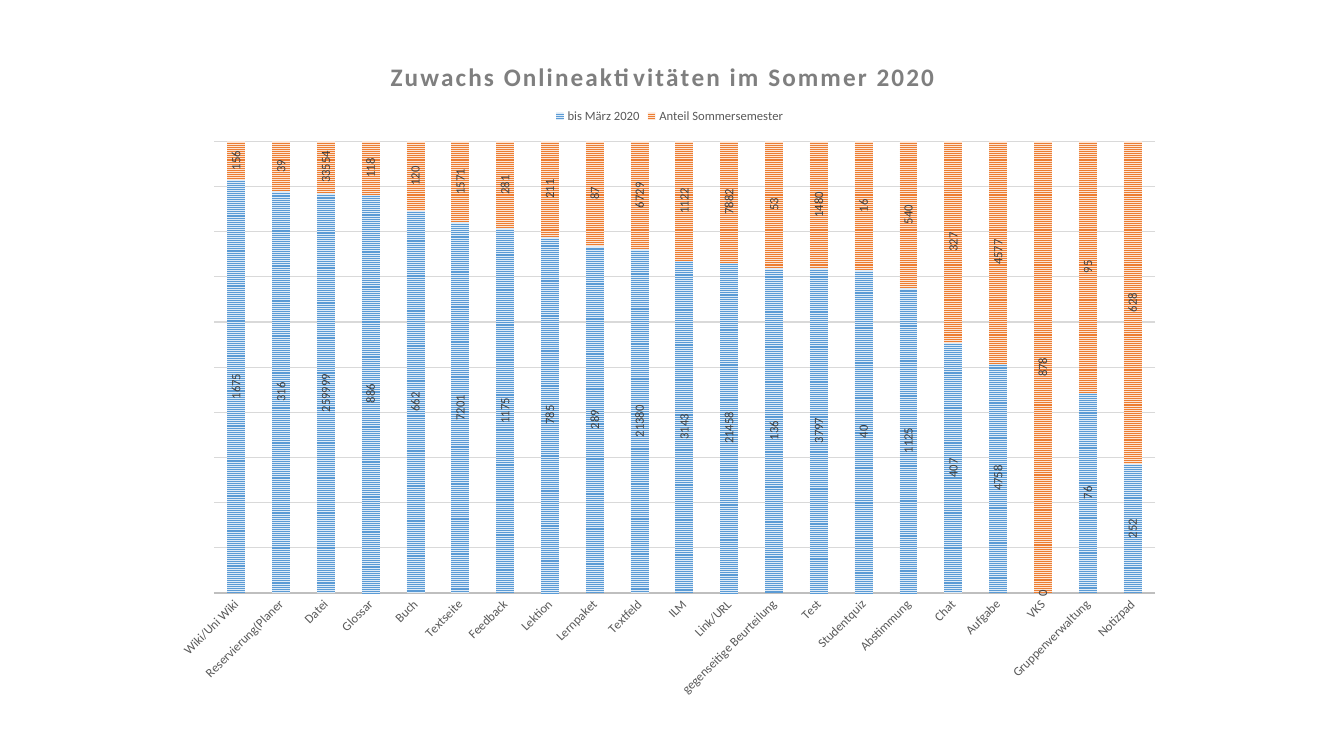
from lxml import etree
from pptx import Presentation
from pptx.chart.data import CategoryChartData
from pptx.dml.color import RGBColor
from pptx.enum.chart import XL_CHART_TYPE, XL_LABEL_POSITION, XL_LEGEND_POSITION, XL_TICK_MARK
from pptx.enum.dml import MSO_PATTERN
from pptx.oxml.ns import qn
from pptx.util import Cm, Pt

STACKED = XL_CHART_TYPE.COLUMN_STACKED_100
CENTER = XL_LABEL_POSITION.CENTER
TOP = XL_LEGEND_POSITION.TOP
NO_TICK = XL_TICK_MARK.NONE
STRIPES = MSO_PATTERN.NARROW_HORIZONTAL

FONT = "Calibri"
CHART_WIDTH, CHART_HEIGHT = Cm(25.53), Cm(16.92)
COLORS = {
    "title": "7F7F7F", "text": "595959", "label": "404040",
    "axis": "BFBFBF", "grid": "D9D9D9",
    "blue": "5B9BD5", "light blue": "DEEBF7",
    "orange": "ED7D31", "light orange": "FBE5D6",
}
ACTIVITIES = [
    ("Wiki/Uni Wiki", 1675, 156),
    ("Reservierung(Planer", 316, 39),
    ("Datei", 259999, 33554),
    ("Glossar", 886, 118),
    ("Buch", 662, 120),
    ("Textseite", 7201, 1571),
    ("Feedback", 1175, 281),
    ("Lektion", 785, 211),
    ("Lernpaket", 289, 87),
    ("Textfeld", 21380, 6729),
    ("ILM", 3143, 1122),
    ("Link/URL", 21458, 7882),
    ("gegenseitige Beurteilung", 136, 53),
    ("Test", 3797, 1480),
    ("Studentquiz", 40, 16),
    ("Abstimmung", 1125, 540),
    ("Chat", 407, 327),
    ("Aufgabe", 4758, 4577),
    ("VKS", 0, 878),
    ("Gruppenverwaltung", 76, 95),
    ("Notizpad", 252, 628),
]


def style_font(font, size, color, rotated_parent=None, degrees=0):
    """Set the font and, for chart labels, the angle of their text."""
    font.name = FONT
    font.size = Pt(size)
    font.color.rgb = RGBColor.from_string(COLORS[color])
    if rotated_parent is not None:
        body = rotated_parent.find(qn("c:txPr")).find(qn("a:bodyPr"))
        body.set("rot", str(degrees * 60000))
        body.set("vert", "horz")


def place(element, index, **lengths):
    """Give a chart part a manual layout, measured from the chart's corner."""
    for old_layout in element.findall(qn("c:layout")):
        element.remove(old_layout)
    layout = etree.Element(qn("c:layout"))
    manual = etree.SubElement(layout, qn("c:manualLayout"))
    if "w" in lengths:
        etree.SubElement(manual, qn("c:layoutTarget")).set("val", "inner")
    for mode in ("xMode", "yMode"):
        etree.SubElement(manual, qn("c:" + mode)).set("val", "edge")
    for name, length in lengths.items():
        whole = CHART_WIDTH if name in "xw" else CHART_HEIGHT
        etree.SubElement(manual, qn("c:" + name)).set("val", str(length / whole))
    element.insert(index, layout)


presentation = Presentation()
presentation.slide_width = Cm(33.87)
presentation.slide_height = Cm(19.05)
slide = presentation.slides.add_slide(presentation.slide_layouts[6])

names, before, summer = zip(*ACTIVITIES)
chart_data = CategoryChartData()
chart_data.categories = names
chart_data.add_series("bis März 2020", before)
chart_data.add_series("Anteil Sommersemester", summer)
chart = slide.shapes.add_chart(
    STACKED, Cm(4.11), Cm(0.97), CHART_WIDTH, CHART_HEIGHT, chart_data).chart
chart.font.name = FONT
chart.font.size = Pt(10)

# Title and legend
chart.has_title = True
title = chart.chart_title
paragraph = title.text_frame.paragraphs[0]
paragraph.text = "Zuwachs Onlineaktivitäten im Sommer 2020"
title_font = paragraph.runs[0].font
style_font(title_font, 18, "title")
title_font.bold = True
paragraph.runs[0]._r.get_or_add_rPr().set("spc", "150")
place(title._element, 1, x=Cm(5.62), y=Cm(0.4))

chart.has_legend = True
legend = chart.legend
legend.position = TOP
legend.include_in_layout = False
style_font(legend.font, 9, "text")
place(legend._element, 1, x=Cm(9.8), y=Cm(1.67))

# Axes
category_axis = chart.category_axis
category_axis.major_tick_mark = NO_TICK
category_axis.format.line.color.rgb = RGBColor.from_string(COLORS["axis"])
category_axis.format.line.width = Pt(1.5)
style_font(category_axis.tick_labels.font, 9, "text", category_axis._element, -45)

value_axis = chart.value_axis
value_axis.visible = False
value_axis.has_major_gridlines = True
grid_line = value_axis.major_gridlines.format.line
grid_line.color.rgb = RGBColor.from_string(COLORS["grid"])
grid_line.width = Pt(0.75)

# Striped columns
plot = chart.plots[0]
plot.gap_width = 150
plot.overlap = 100
plot.vary_by_categories = False
for series, color in zip(plot.series, ("blue", "orange")):
    fill = series.format.fill
    fill.patterned()
    fill.pattern = STRIPES
    fill.fore_color.rgb = RGBColor.from_string(COLORS[color])
    fill.back_color.rgb = RGBColor.from_string(COLORS["light " + color])
    labels = series.data_labels
    labels.show_value = True
    labels.position = CENTER
    style_font(labels.font, 9, "label", labels._element, -90)

plot_area = chart._chartSpace.chart.plotArea
place(plot_area, 0, x=Cm(1.28), y=Cm(2.59), w=Cm(23.72), h=Cm(11.39))

presentation.save("out.pptx")
